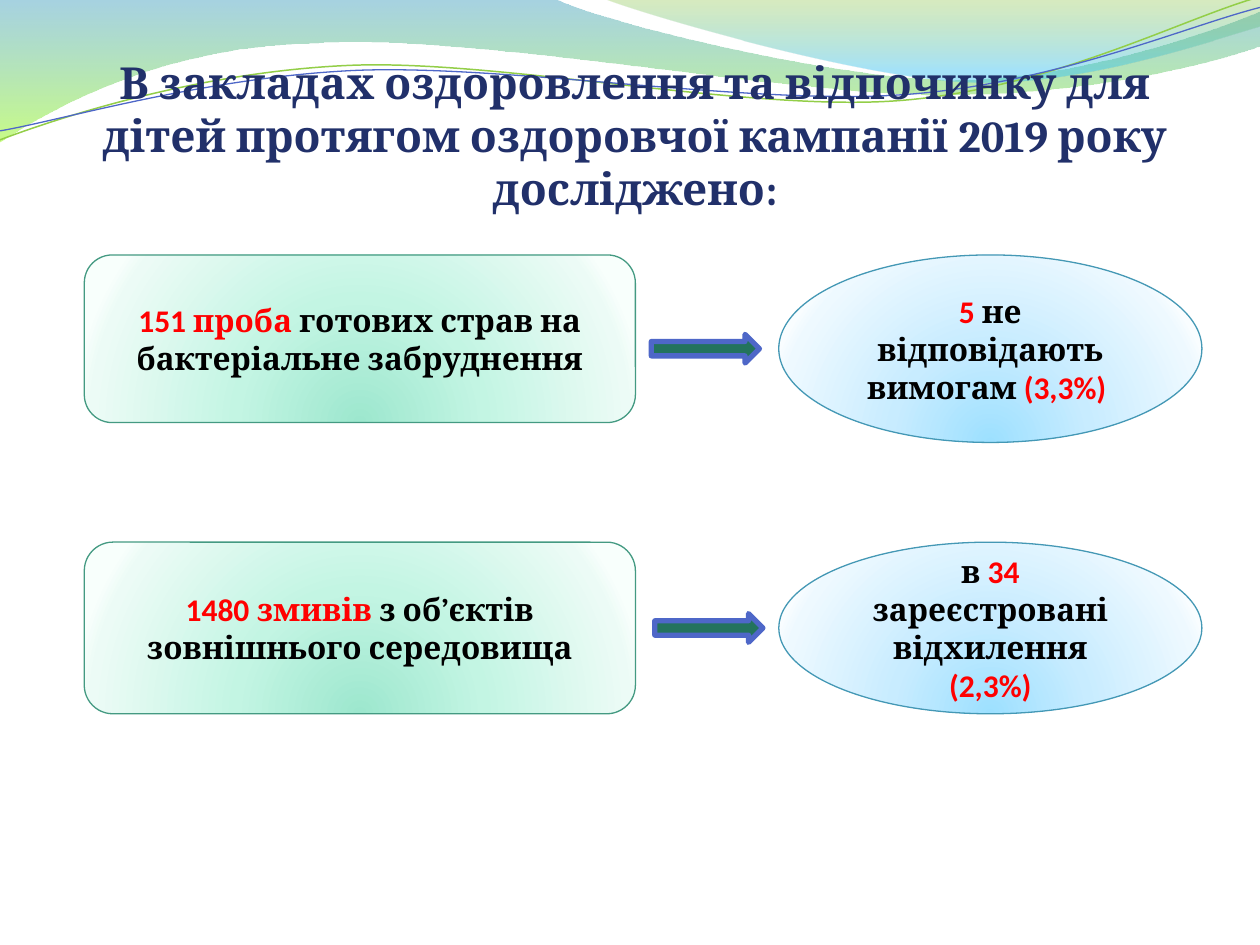
from math import cos, radians, sin

from pptx import Presentation
from pptx.dml.color import RGBColor
from pptx.enum.shapes import MSO_SHAPE as Preset
from pptx.enum.text import MSO_ANCHOR as Anchor, MSO_AUTO_SIZE as AutoSize, PP_ALIGN as Align
from pptx.oxml import parse_xml
from pptx.oxml.ns import nsdecls, qn
from pptx.util import Cm, Pt

RED, BLACK, NAVY = "FF0000", "000000", "21306A"
ARROW_FILL, ACCENT, LIME = "23735D", "4E67C8", "93CE48"
DOWN = '<a:lin ang="5400000" scaled="0"/>'
FROM_BELOW = '<a:path path="circle"><a:fillToRect l="50000" t="130000" r="50000" b="-30000"/></a:path>'
GREEN_GLOW = [(0, "9DE7CE", 100), (43, "C3F5E3", 100), (93, "ECFBF6", 100), (100, "F8FFFC", 100)]
BLUE_GLOW = [(0, "9DE0FF", 100), (43, "C8ECFF", 100), (93, "EEF9FF", 100), (100, "F9FDFF", 100)]

BANDS = [
    ((-0.03, -0.03, 25.45, 2.9),
     [(0, 0), (11.18, -0.03),
      (12.09, 0.43, 16.87, 1.6, 19.25, 1.6), (21.67, 1.6, 24.33, 0.66, 25.4, 0.23),
      (25.43, 0.91),
      (24.97, 1.12, 22.1, 1.93, 18.95, 1.91), (15.8, 1.91, 9.7, 0.71, 6.53, 0.86),
      (3.28, 0.91, 1.17, 2.11, -0.03, 2.87), (0, 0)],
     [(0, "3B9CBF", 45), (100, "9CFA24", 55)]),
    ((12.17, -0.03, 13.23, 1.78),
     [(12.17, -0.03),
      (12.93, 0.28, 17.32, 1.57, 19.53, 1.65), (21.74, 1.75, 24.41, 0.81, 25.4, 0.53),
      (25.4, 0), (12.17, -0.03)],
     [(0, "7EBE2C", 30), (80, "39C1F1", 45)]),
]
STRAND_TILT = -2.7
STRANDS = [
    ((-0.05, 0.56, 25.45, 1.8),
     [(0, 2.82), (1.22, 2.36, 4.01, 1.45, 7.04, 1.32),
      (10.03, 1.19, 15.06, 2.26, 18.11, 2.03), (21.16, 1.8, 23.83, 0.38, 25.35, -0.05)],
     LIME, 0.85),
    ((-0.05, 0.76, 25.48, 1.47),
     [(0, 2.64), (1.19, 2.44, 4.17, 1.55, 7.19, 1.42),
      (10.24, 1.3, 15.16, 2.13, 18.21, 1.91), (21.23, 1.7, 23.9, 0.53, 25.4, 0.15)],
     ACCENT, 0.75),
]
RESULTS = [
    {"box": (1.7, 5.14, 22.53, 3.78), "sample_height": 3.38, "arrow": (11.43, 1.6),
     "sample": [("151", "Calibri", RED), (" проба ", "Cambria", RED),
                ("готових страв на бактеріальне забруднення", "Cambria", BLACK)],
     "finding": [("5", "Calibri", RED), (" не відповідають вимогам ", "Cambria", BLACK),
                 ("(3,3%) ", "Calibri", RED)]},
    {"box": (1.7, 10.93, 22.53, 3.46), "sample_height": 3.46, "arrow": (11.5, 1.44),
     "sample": [("1480 ", "Calibri", RED), ("змивів ", "Cambria", RED),
                ("з об’єктів зовнішнього середовища", "Cambria", BLACK)],
     "finding": [("в ", "Cambria", BLACK), ("34 ", "Calibri", RED),
                 ("зареєстровані відхилення ", "Cambria", BLACK), ("(2,3%)", "Calibri", RED)]},
]


def rgb(value):
    return RGBColor.from_string(value)


def style_font(font, name, size, color):
    font.name, font.size, font.bold = name, Pt(size), True
    font.color.rgb = rgb(color)


def set_gradient(shape, stops, direction):
    shape.fill.gradient()
    stop_xml = "".join(
        f'<a:gs pos="{pos * 1000}"><a:srgbClr val="{color}">'
        f'<a:alpha val="{alpha * 1000}"/></a:srgbClr></a:gs>'
        for pos, color, alpha in stops)
    gradient = parse_xml(
        f'<a:gradFill {nsdecls("a")} rotWithShape="1">'
        f'<a:gsLst>{stop_xml}</a:gsLst>{direction}</a:gradFill>')
    properties = shape._element.spPr
    properties.replace(properties.find(qn("a:gradFill")), gradient)


def set_line(shape, color, width):
    shape.line.color.rgb = rgb(color)
    shape.line.width = Pt(width)


def add_curve(shapes, box, segments, tilt=0):
    left, top, width, height = box
    middle_x, middle_y = left + width / 2, top + height / 2
    turn = radians(-tilt)

    def point_xml(x, y):
        dx, dy = x - middle_x, y - middle_y
        local_x = dx * cos(turn) - dy * sin(turn) + width / 2
        local_y = dx * sin(turn) + dy * cos(turn) + height / 2
        return f'<a:pt x="{Cm(local_x)}" y="{Cm(local_y)}"/>'

    commands = ""
    for index, segment in enumerate(segments):
        command = "moveTo" if index == 0 else "lnTo" if len(segment) == 2 else "cubicBezTo"
        points = "".join(point_xml(*pair) for pair in zip(segment[::2], segment[1::2]))
        commands += f"<a:{command}>{points}</a:{command}>"
    if segments[0] == segments[-1]:
        commands += "<a:close/>"

    builder = shapes.build_freeform(Cm(left), Cm(top))
    builder.add_line_segments([(Cm(left + width), Cm(top + height))], close=False)
    curve = builder.convert_to_shape()
    geometry = curve._element.spPr.find(qn("a:custGeom"))
    geometry.replace(geometry.find(qn("a:pathLst")), parse_xml(
        f'<a:pathLst {nsdecls("a")}><a:path w="{Cm(width)}" h="{Cm(height)}">'
        f'{commands}</a:path></a:pathLst>'))
    curve.rotation = tilt % 360
    curve.shadow.inherit = False
    return curve


def add_waves(slide):
    for box, segments, stops in BANDS:
        band = add_curve(slide.shapes, box, segments)
        set_gradient(band, stops, DOWN)
        band.line.fill.background()
    strands = slide.shapes.add_group_shape()
    for box, segments, color, width in STRANDS:
        strand = add_curve(strands.shapes, box, segments, STRAND_TILT)
        strand.fill.background()
        set_line(strand, color, width)


def add_preset(slide, preset, box, line_color, line_width):
    shape = slide.shapes.add_shape(preset, *(Cm(length) for length in box))
    shape.shadow.inherit = False
    set_line(shape, line_color, line_width)
    return shape


def add_caption(shape, pieces):
    frame = shape.text_frame
    frame.word_wrap = True
    frame.vertical_anchor = Anchor.MIDDLE
    paragraph = frame.paragraphs[0]
    paragraph.alignment = Align.CENTER
    for words, font_name, color in pieces:
        run = paragraph.add_run()
        run.text = words
        style_font(run.font, font_name, 18, color)


def add_result(slide, box, sample, finding, sample_height, arrow):
    left, top, width, height = box
    sample_width, finding_width = 11.11, 8.53
    sample_box = add_preset(slide, Preset.ROUNDED_RECTANGLE,
                            (left, top, sample_width, sample_height), "449A82", 0.75)
    set_gradient(sample_box, GREEN_GLOW, FROM_BELOW)
    add_caption(sample_box, sample)

    finding_oval = add_preset(slide, Preset.OVAL,
                              (left + width - finding_width, top, finding_width, height),
                              "4498B5", 0.75)
    set_gradient(finding_oval, BLUE_GLOW, FROM_BELOW)
    add_caption(finding_oval, finding)

    arrow_x, arrow_y = arrow
    pointer = add_preset(slide, Preset.RIGHT_ARROW,
                         (left + arrow_x, top + arrow_y, 2.18, 0.58), ACCENT, 3)
    pointer.fill.solid()
    pointer.fill.fore_color.rgb = rgb(ARROW_FILL)


def place_title(slide, box):
    title = slide.shapes.title
    title.left, title.top, title.width, title.height = (Cm(length) for length in box)
    slide.shapes._spTree.append(title._element)
    frame = title.text_frame
    frame.text = "В закладах оздоровлення та відпочинку для дітей протягом оздоровчої кампанії 2019 року досліджено:"
    frame.word_wrap = True
    frame.auto_size = AutoSize.NONE
    frame.vertical_anchor = Anchor.BOTTOM
    frame.margin_left = frame.margin_right = frame.margin_bottom = 0
    frame.margin_top = Cm(0.13)
    paragraph = frame.paragraphs[0]
    paragraph.alignment = Align.CENTER
    style_font(paragraph.runs[0].font, "Cambria", 25.2, NAVY)


def main():
    deck = Presentation()
    deck.slide_width, deck.slide_height = Cm(25.4), Cm(19.05)
    slide = deck.slides.add_slide(deck.slide_layouts[5])
    add_waves(slide)
    for result in RESULTS:
        add_result(slide, **result)
    place_title(slide, (1.27, 1.32, 23.06, 3))
    deck.save("out.pptx")


if __name__ == "__main__":
    main()
